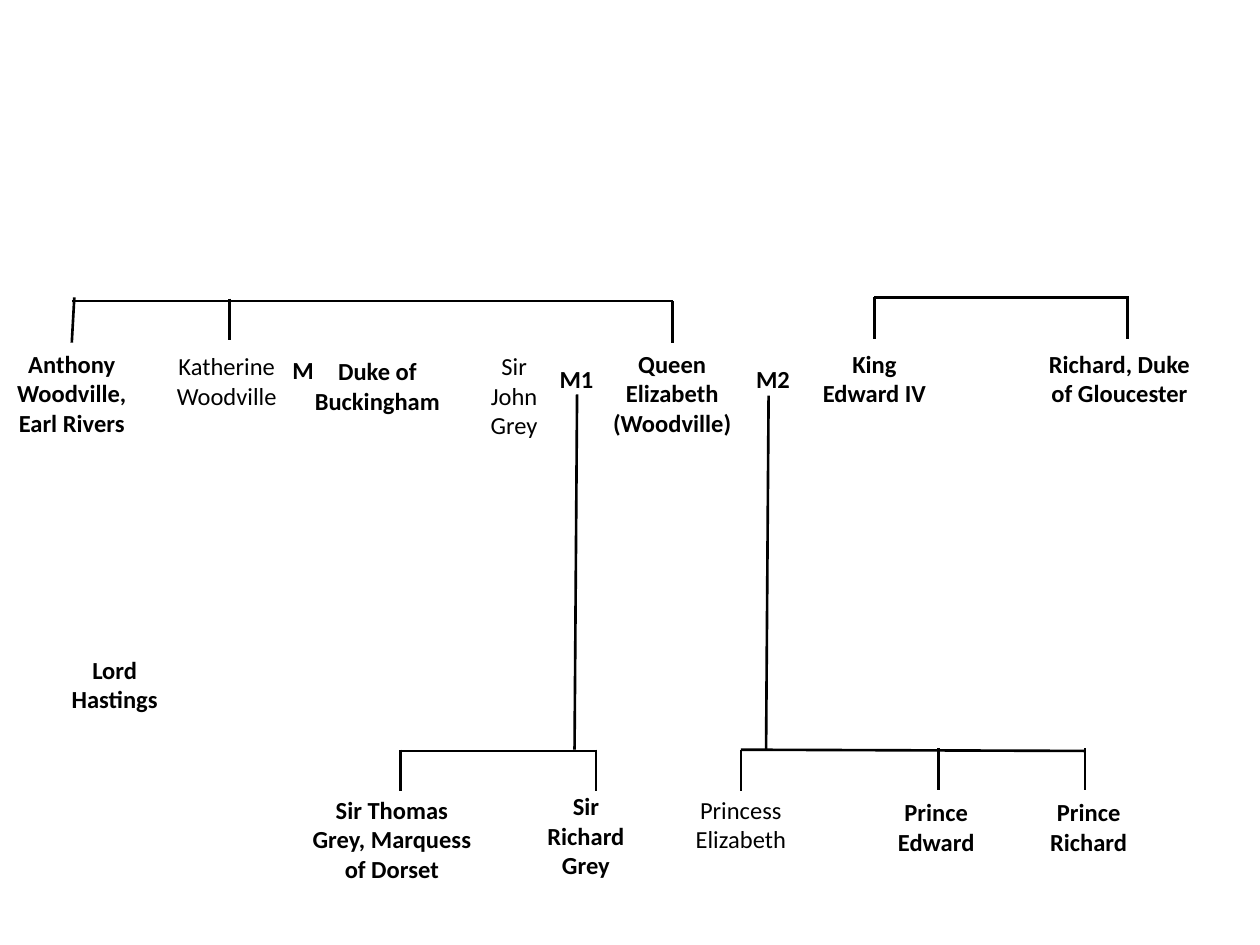
"""Build a family tree slide of the Woodville, Grey and York families."""
from lxml import etree
from pptx import Presentation
from pptx.dml.color import RGBColor
from pptx.enum.shapes import MSO_CONNECTOR
from pptx.enum.text import MSO_AUTO_SIZE, PP_ALIGN
from pptx.oxml.ns import qn
from pptx.util import Inches, Pt

STRAIGHT = MSO_CONNECTOR.STRAIGHT
CENTER = PP_ALIGN.CENTER
GROW = MSO_AUTO_SIZE.SHAPE_TO_FIT_TEXT
BLACK = RGBColor(0, 0, 0)
WHITE = RGBColor(255, 255, 255)

FONT = "Calibri"
FONT_SIZE = 14
LINE_WIDTH = 1.5
LINE_HEIGHT = 0.235
PADDING = 0.1
DROP = 0.33

# (name, left, top, width, lines, bold)
PEOPLE = [
    ("King Edward IV", 6.43, 2.72, 1.02, 2, True),
    ("Richard, Duke of Gloucester", 8.13, 2.72, 1.51, 2, True),
    ("Queen Elizabeth (Woodville)", 4.58, 2.72, 1.51, 3, True),
    ("Anthony Woodville, Earl Rivers", 0, 2.72, 1.14, 3, True),
    ("Sir John Grey", 3.69, 2.74, 0.78, 3, False),
    ("Katherine Woodville", 1.23, 2.74, 1.14, 2, False),
    ("Duke of Buckingham", 2.37, 2.78, 1.25, 2, True),
    ("Sir Thomas Grey, Marquess of Dorset", 2.35, 6.26, 1.52, 3, True),
    ("Sir Richard Grey", 4.14, 6.23, 1.02, 3, True),
    ("Princess Elizabeth", 5.41, 6.26, 0.94, 2, False),
    ("Prince Edward", 6.92, 6.28, 1.02, 2, True),
    ("Prince Richard", 8.13, 6.28, 1.02, 2, True),
    ("Lord Hastings", 0.34, 5.15, 1.14, 2, True),
]
MARRIAGES = [
    ("M", 1.65, 2.77, 1.51, 1, True),
    ("M1", 3.82, 2.84, 1.51, 1, True),
    ("M2", 5.38, 2.84, 1.51, 1, True),
]
SIBLING_BARS = [
    ((0.57, 2.39), (5.34, 2.39)),
    ((6.94, 2.36), (8.96, 2.36)),
    ((3.18, 5.96), (4.73, 5.96)),
    ((5.88, 5.95), (8.61, 5.96)),
]
SIBLING_DROPS = [
    (1.82, 2.37), (5.34, 2.39), (6.94, 2.36), (8.95, 2.36),
    (3.18, 5.95), (4.73, 5.95), (5.88, 5.95), (7.45, 5.94), (8.61, 5.94),
]
SLANTED_LINES = [
    ((0.59, 2.36), (0.57, 2.72)),
    ((4.56, 5.95), (4.58, 3.13)),
    ((6.08, 5.96), (6.10, 3.14)),
]


def add_label(slide, text, left, top, width, lines, bold):
    """Add a centred label whose height follows its number of lines."""
    height = PADDING + lines * LINE_HEIGHT
    box = slide.shapes.add_textbox(Inches(left), Inches(top), Inches(width), Inches(height))
    frame = box.text_frame
    frame.word_wrap = True
    frame.auto_size = GROW
    paragraph = frame.paragraphs[0]
    paragraph.alignment = CENTER
    run = paragraph.add_run()
    run.text = text
    run.font.name = FONT
    run.font.size = Pt(FONT_SIZE)
    run.font.bold = bold
    run.font.color.rgb = BLACK


def add_line(slide, start, end):
    """Add a plain black line between two points."""
    points = [Inches(value) for value in (*start, *end)]
    connector = slide.shapes.add_connector(STRAIGHT, *points)
    connector.line.color.rgb = BLACK
    connector.line.width = Pt(LINE_WIDTH)
    etree.SubElement(connector._element.spPr, qn("a:effectLst"))


def main():
    """Create the slide and save it."""
    presentation = Presentation()
    presentation.slide_width = Inches(10)
    presentation.slide_height = Inches(7.5)
    slide = presentation.slides.add_slide(presentation.slide_layouts[6])
    slide.background.fill.solid()
    slide.background.fill.fore_color.rgb = WHITE

    drops = [((x, y), (x, y + DROP)) for x, y in SIBLING_DROPS]
    for start, end in SIBLING_BARS + drops + SLANTED_LINES:
        add_line(slide, start, end)
    for label in PEOPLE + MARRIAGES:
        add_label(slide, *label)

    presentation.save("out.pptx")


if __name__ == "__main__":
    main()
